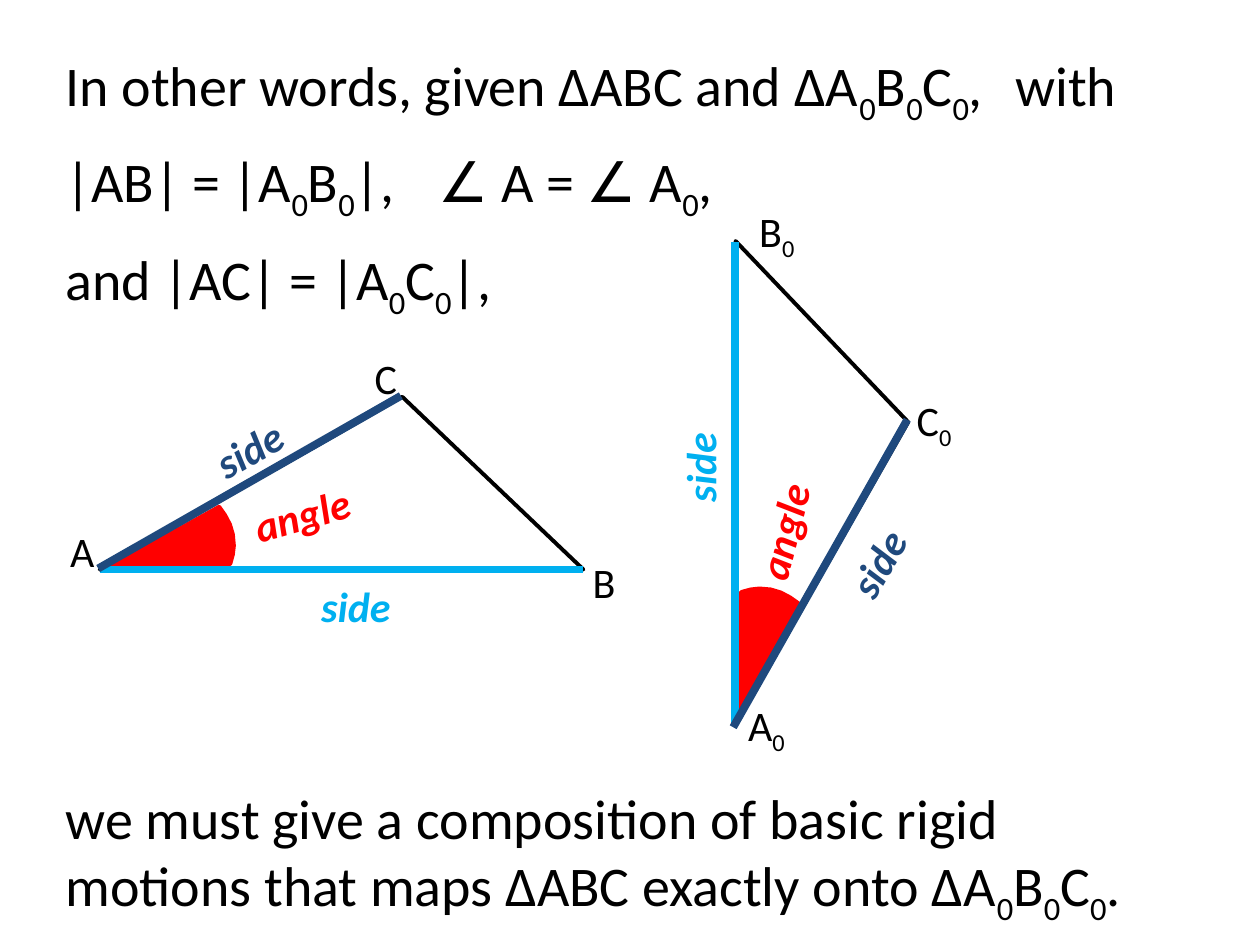
from lxml import etree
from pptx import Presentation
from pptx.dml.color import RGBColor
from pptx.enum import shapes, text
from pptx.oxml.ns import qn
from pptx.util import Cm, Pt

HUES = {"ink": "000000", "red": "FF0000", "sky": "00B0F0", "navy": "1F497D"}

# Content: lengths in cm; "_" lowers the character after it
LINES = [  # words, left, top, width, height
    ("In other words, given ΔABC and ΔA_0B_0C_0,", 1.07, 0.89, 19.53, 1.63),
    ("with", 20.22, 0.89, 2.72, 1.63),
    ("|AB| = |A_0B_0|,", 1.07, 2.82, 8.05, 1.63),
    ("∠ A = ∠ A_0,", 8.59, 2.82, 6.15, 1.63),
    ("and |AC| = |A_0C_0|,", 1.07, 4.8, 12.07, 1.63),
    ("we must give a composition of basic rigid motions that maps "
     "ΔABC exactly onto ΔA_0B_0C_0.", 1.07, 15.67, 22.86, 3),
]
POINTS = [  # name, left, top
    ("A", 0.71, 10.46), ("B", 11.23, 11.1), ("C", 6.83, 6.99),
    ("A_0", 14.5, 13.97), ("B_0", 14.71, 4.01), ("C_0", 17.88, 7.82),
]
LABELS = [  # word, left, top, turn, hue
    ("angle", 3.61, 9.73, 344, "red"),
    ("angle", 13.31, 10.08, 284.3, "red"),
    ("side", 2.54, 8.41, 330.4, "navy"),
    ("side", 4.7, 11.58, 0, "sky"),
    ("side", 11.63, 8.79, 270, "sky"),
    ("side", 15.21, 10.72, 300, "navy"),
]
SIDES = [  # from x, y, to x, y, hue
    (2.01, 11.48, 11.76, 11.48, "sky"),
    (14.81, 4.88, 14.81, 14.61, "sky"),
    (1.98, 11.46, 8.08, 7.98, "navy"),
    (18.29, 8.46, 14.78, 14.66, "navy"),
]
# Outlines as offsets from vertex A
TRI = [(0, 0), (9.75, 0), (6.1, -3.48)]
WEDGE = [(0, 0), (2.29, -1.27), (2.41, -1.1), (2.51, -0.91), (2.57, -0.71),
         (2.59, -0.48), (2.57, -0.3), (2.52, -0.12), (2.39, 0)]
SHAPES = [  # outline, vertex, mirrored, fill, line, weight
    (TRI, (14.83, 14.61), True, None, "ink", 2.25),
    (TRI, (2.01, 11.48), False, None, "ink", 2.25),
    (WEDGE, (2.13, 11.48), False, "red", "red", 2),
    (WEDGE, (14.83, 14.45), True, "red", "red", 2),
]

deck = Presentation()
deck.slide_width, deck.slide_height = Cm(25.4), Cm(19.05)
slide = deck.slides.add_slide(deck.slide_layouts[6])


def tint(name):
    return RGBColor.from_string(HUES[name])


def write(words, box, size, hue="ink", turn=0, mid=True, bold=False):
    shape = slide.shapes.add_textbox(*map(Cm, box))
    shape.rotation = turn
    frame = shape.text_frame
    frame.word_wrap = True
    para = frame.paragraphs[0]
    para.alignment = text.PP_ALIGN.CENTER if mid else text.PP_ALIGN.LEFT
    head, *rest = words.split("_")
    parts = [(head, False)]
    for part in rest:
        parts += [(part[0], True), (part[1:], False)]
    for part, low in parts:
        if not part:
            continue
        run = para.add_run()
        run.text = part
        font = run.font
        font.name, font.size = "Calibri", Pt(size)
        font.color.rgb = tint(hue)
        if bold:
            font.bold = font.italic = True
        if low:
            run._r.get_or_add_rPr().set("baseline", "-25000")


def outline(offs, apex, flip, fill, line, weight):
    # The second figure is the first one mirrored across a diagonal
    if flip:
        offs = [(-y, -x) for x, y in offs]
    dots = [(Cm(apex[0] + x), Cm(apex[1] + y)) for x, y in offs]
    pen = slide.shapes.build_freeform(*dots[0], scale=1.0)
    pen.add_line_segments(dots[1:], close=True)
    shape = pen.convert_to_shape()
    shape.shadow.inherit = False
    if fill:
        shape.fill.solid()
        shape.fill.fore_color.rgb = tint(fill)
    else:
        shape.fill.background()
    shape.line.color.rgb = tint(line)
    shape.line.width = Pt(weight)


# Triangles and angle wedges
for item in SHAPES:
    outline(*item)

# Statement
for words, *box in LINES:
    write(words, box, 32, mid=False)

# Vertex names
for name, x, y in POINTS:
    write(name, (x, y, 1.9, 1.27), 24)

# Matching sides
for *ends, hue in SIDES:
    side = slide.shapes.add_connector(
        shapes.MSO_CONNECTOR.STRAIGHT, *map(Cm, ends))
    side.line.color.rgb = tint(hue)
    side.line.width = Pt(4.5)
    etree.SubElement(side._element.spPr, qn("a:effectLst"))

# Side and angle labels
for word, x, y, turn, hue in LABELS:
    write(word, (x, y, 4.95, 1.27), 24, hue, turn, bold=True)

deck.save("out.pptx")
